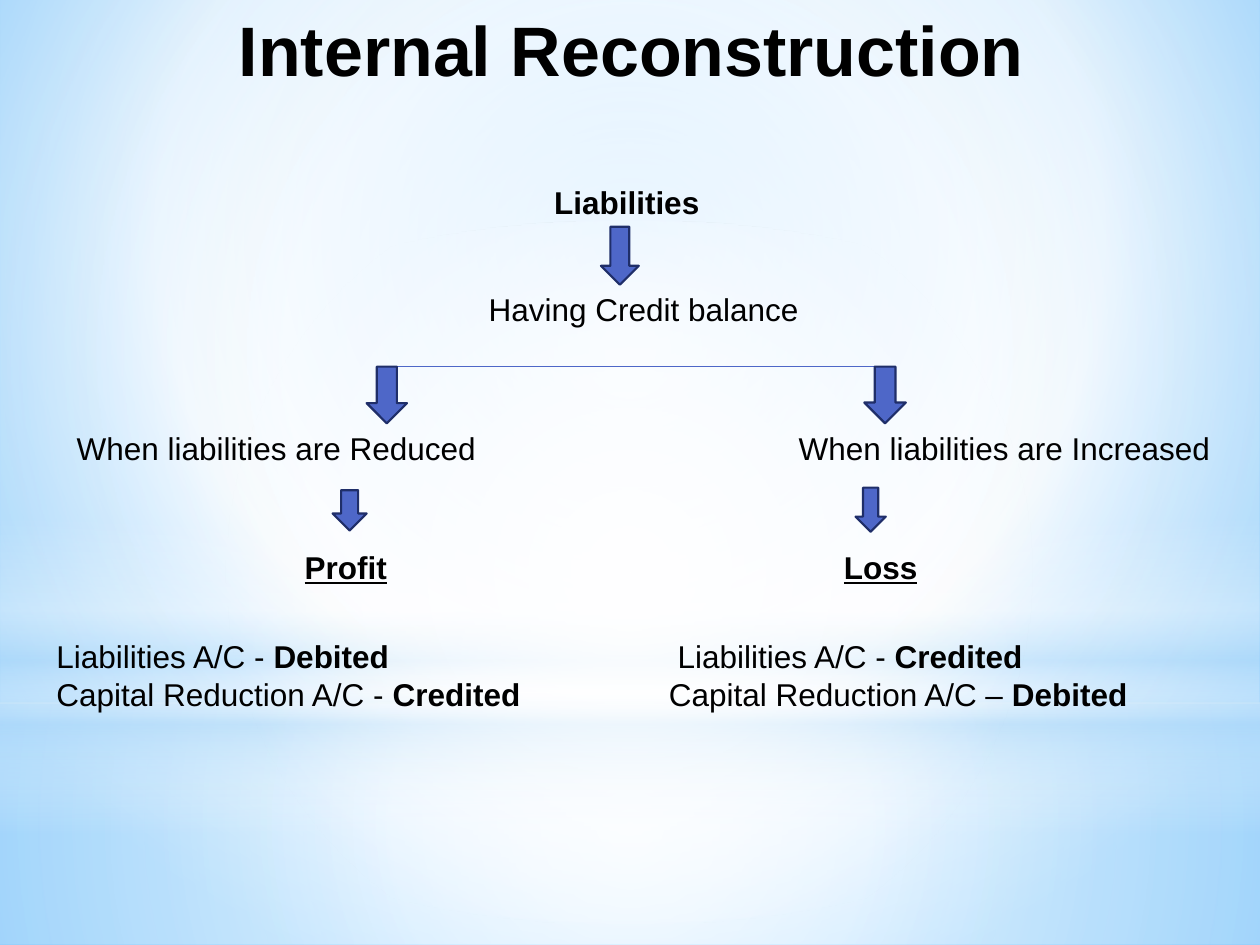
import dataclasses

import pptx
import pptx.dml.color
import pptx.enum.shapes
import pptx.enum.text
import pptx.oxml
import pptx.oxml.ns
import pptx.util

SHAPES = pptx.enum.shapes.MSO_SHAPE
TEXT = pptx.enum.text
COLUMNS, ROWS = 100, 75


@dataclasses.dataclass(frozen=True)
class Theme:
    font: str = "Arial"
    title_size: int = 40
    body_size: int = 18
    ink: str = "000000"
    accent: str = "4E67C8"
    outline: str = "1F2E69"
    white: str = "FFFFFF"
    mist: str = "B4DCFA"
    sky: str = "9ED5FF"
    deep_sky: str = "5BB9FF"
    arrow_line: float = 1.25
    branch_line: float = 0.75


THEME = Theme()
PLAIN, BOLD = {}, {"bold": True}
VERDICT = {"bold": True, "underline": True}
CENTRE = (50, 50, 50, 50)


def rgb(value):
    return pptx.dml.color.RGBColor.from_string(value)


def grid(*cells):
    return [pptx.util.Inches(cell * 10 / COLUMNS) for cell in cells]


def place(item, cells):
    for side, length in zip(("left", "top", "width", "height"), grid(*cells)):
        setattr(item, side, length)


def paint_gradient(fill, properties, stops, focus=None):
    fill.solid()
    marks = "".join(
        f'<a:gs pos="{at * 1000}"><a:srgbClr val="{color}">'
        f'<a:alpha val="{alpha * 1000}"/></a:srgbClr></a:gs>'
        for at, color, alpha in stops
    )
    if focus:
        sides = " ".join(f'{side}="{share * 1000}"' for side, share in zip("ltrb", focus))
        course = f'<a:path path="circle"><a:fillToRect {sides}/></a:path>'
    else:
        course = '<a:lin ang="5400000" scaled="0"/>'
    gradient = pptx.oxml.parse_xml(
        f'<a:gradFill {pptx.oxml.ns.nsdecls("a")} rotWithShape="1">'
        f"<a:gsLst>{marks}</a:gsLst>{course}</a:gradFill>"
    )
    properties.replace(properties.find(pptx.oxml.ns.qn("a:solidFill")), gradient)


def add_glow(slide, master, order, kind, cells, stops, focus):
    glow = slide.shapes.add_shape(kind, *grid(*cells))
    glow.shadow.inherit = False
    glow.line.fill.background()
    paint_gradient(glow.fill, glow.element.spPr, stops, focus)
    glow.element.nvSpPr.cNvPr.set("id", str(100 + order))
    master.shapes.element.insert(2 + order, glow.element)


def add_backdrop(slide, master):
    white, mist = THEME.white, THEME.mist
    fill = slide.background.fill
    fill.solid()
    properties = slide.element.find(".//" + pptx.oxml.ns.qn("p:bgPr"))
    paint_gradient(
        fill,
        properties,
        [(0, THEME.sky, 100), (60, white, 100), (100, THEME.deep_sky, 100)],
        (20, 10, 20, 60),
    )
    horizon = 55.8
    floor = [(0, white, 91), (37, white, 76), (100, mist, 79)]
    wall = [(0, white, 89), (48, white, 62), (100, mist, 79)]
    band = [(0, white, 0), (29, white, 30), (45, mist, 40),
            (55, white, 26), (65, mist, 60), (100, white, 0)]
    halo = [(0, white, 100), (56, white, 0)]
    glows = [
        (SHAPES.RECTANGLE, (0, horizon, COLUMNS, ROWS - horizon), floor, CENTRE),
        (SHAPES.RECTANGLE, (0, 0, COLUMNS, horizon), wall, CENTRE),
        (SHAPES.RECTANGLE, (0, 41.2, COLUMNS, 25), band, None),
        (SHAPES.OVAL, (0, 17.5, COLUMNS, horizon), halo, CENTRE),
    ]
    for order, glow in enumerate(glows):
        add_glow(slide, master, order, *glow)


def write_run(paragraph, words, size, style):
    run = paragraph.add_run()
    run.text = words
    values = {"name": THEME.font, "size": pptx.util.Pt(size), "bold": False, **style}
    for name, value in values.items():
        setattr(run.font, name, value)
    run.font.color.rgb = rgb(THEME.ink)


def set_tab(paragraph, column):
    tabs = pptx.oxml.parse_xml(
        f'<a:tabLst {pptx.oxml.ns.nsdecls("a")}>'
        f'<a:tab pos="{grid(column)[0]}" algn="l"/></a:tabLst>'
    )
    paragraph._p.get_or_add_pPr().append(tabs)


def add_title(slide, words):
    title = slide.shapes.title
    place(title, (0.4, 0, 99.4, 12.5))
    title.text_frame.vertical_anchor = TEXT.MSO_ANCHOR.TOP
    paragraph = title.text_frame.paragraphs[0]
    paragraph.alignment = TEXT.PP_ALIGN.CENTER
    write_run(paragraph, words, THEME.title_size, BOLD)


def add_label(slide, cells, lines, wrap=True):
    frame = slide.shapes.add_textbox(*grid(*cells)).text_frame
    frame.word_wrap = wrap
    frame.auto_size = TEXT.MSO_AUTO_SIZE.SHAPE_TO_FIT_TEXT
    for number, (tab, runs) in enumerate(lines):
        paragraph = frame.add_paragraph() if number else frame.paragraphs[0]
        if tab:
            set_tab(paragraph, tab)
        for words, style in runs:
            write_run(paragraph, words, THEME.body_size, style)


def add_arrow(slide, *cells):
    arrow = slide.shapes.add_shape(SHAPES.DOWN_ARROW, *grid(*cells))
    arrow.shadow.inherit = False
    arrow.fill.solid()
    arrow.fill.fore_color.rgb = rgb(THEME.accent)
    arrow.line.color.rgb = rgb(THEME.outline)
    arrow.line.width = pptx.util.Pt(THEME.arrow_line)


def add_branch(slide, start, end, row):
    branch = slide.shapes.add_connector(
        pptx.enum.shapes.MSO_CONNECTOR.STRAIGHT, *grid(start, row, end, row)
    )
    branch.line.color.rgb = rgb(THEME.accent)
    branch.line.width = pptx.util.Pt(THEME.branch_line)
    branch.element.spPr.append(
        pptx.oxml.parse_xml(f'<a:effectLst {pptx.oxml.ns.nsdecls("a")}/>')
    )


def main():
    deck = pptx.Presentation()
    deck.slide_width, deck.slide_height = grid(COLUMNS, ROWS)
    slide = deck.slides.add_slide(deck.slide_layouts[5])
    add_backdrop(slide, deck.slide_master)
    add_title(slide, "Internal Reconstruction")

    fork_row = 29.1
    add_branch(slide, 30.2, 70.4, fork_row)
    add_arrow(slide, 29.1, fork_row, 3.2, 4.5)
    add_arrow(slide, 68.6, fork_row, 3.3, 4.5)
    add_arrow(slide, 47.7, 18, 3, 4.6)
    add_label(slide, (37.8, 22.5, 26.9, 4), [(None, [("Having Credit balance", PLAIN)])], False)
    add_label(slide, (5.1, 33.6, 94.6, 4), [
        (57.3, [("When liabilities are Reduced\tWhen liabilities are Increased", PLAIN)]),
    ])
    add_arrow(slide, 26.4, 38.9, 2.7, 3.2)
    add_arrow(slide, 67.9, 38.7, 2.4, 3.5)
    add_label(slide, (23.2, 43, 58.3, 4), [
        (42.8, [("Profit", VERDICT), ("\t", PLAIN), ("Loss", VERDICT)]),
    ])
    add_label(slide, (3.5, 50.1, 95.3, 7.1), [
        (49.3, [("Liabilities A/C - ", PLAIN), ("Debited\t", BOLD),
                ("Liabilities A/C - ", PLAIN), ("Credited", BOLD)]),
        (48.6, [("Capital Reduction A/C - ", PLAIN), ("Credited\t", BOLD),
                ("Capital Reduction A/C – ", PLAIN), ("Debited", BOLD)]),
    ])
    add_label(slide, (43, 14, 13.7, 4), [(None, [("Liabilities", BOLD)])], False)
    deck.save("out.pptx")


if __name__ == "__main__":
    main()
